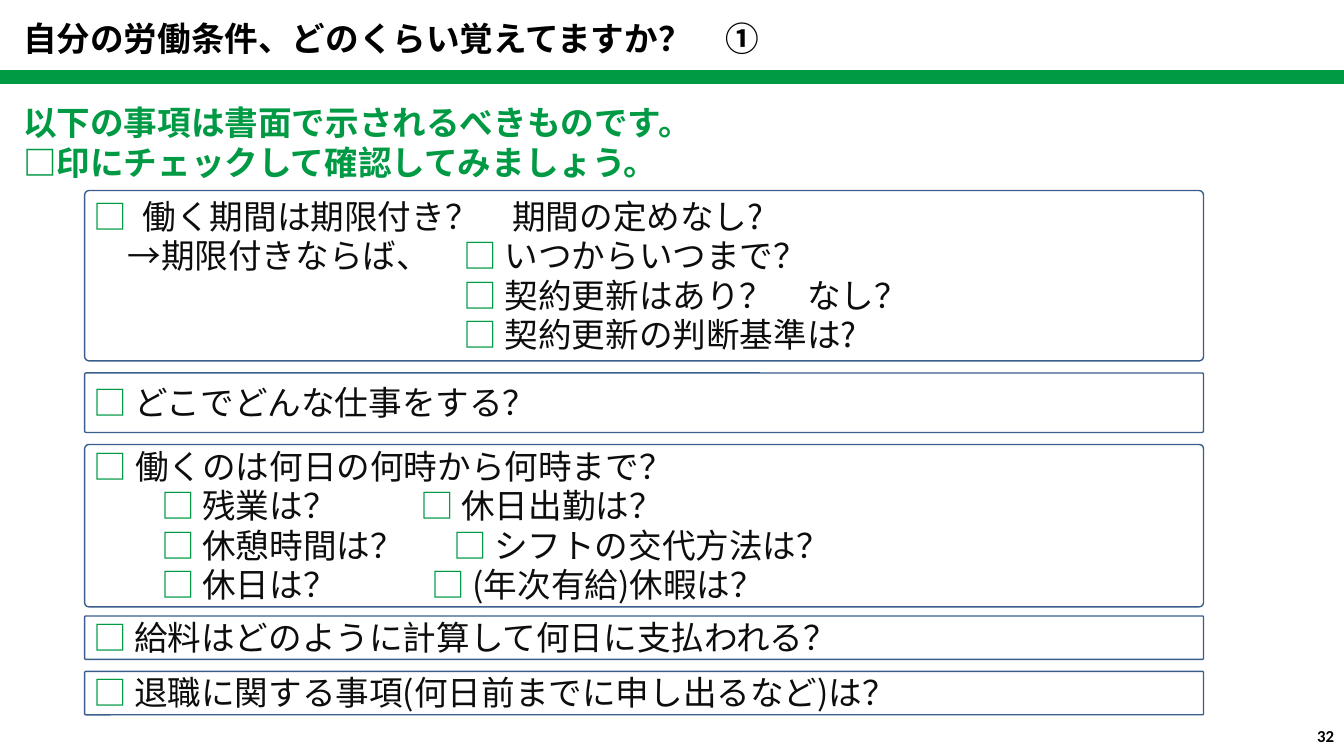
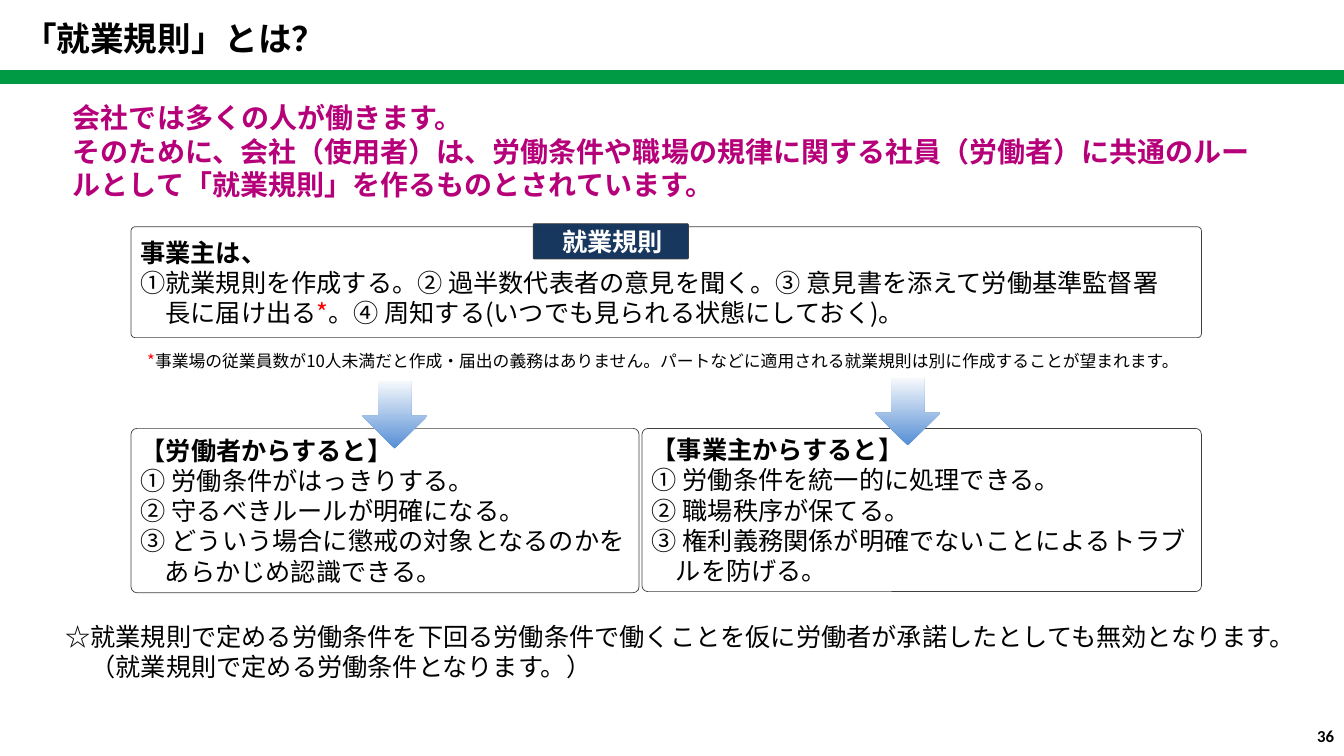
from dataclasses import dataclass
from lxml.etree import SubElement
from pptx import Presentation
from pptx.dml.color import RGBColor as Rgb
from pptx.enum.shapes import MSO_SHAPE as Form
from pptx.enum.text import MSO_ANCHOR as Anchor, PP_ALIGN as Align
from pptx.oxml.ns import qn
from pptx.util import Pt


@dataclass(frozen=True)
class Theme:
    font: str = "Noto Sans CJK JP"
    digit: str = "Calibri"
    black: str = "000000"
    ink: str = "0D0D0D"
    white: str = "FFFFFF"
    green: str = "009944"
    pink: str = "B6007A"
    red: str = "FF0000"
    navy: str = "17375E"
    blue: str = "3A5F8C"
    sky: str = "558ED5"
    pale: str = "F6F9FC"
    gray: str = "404040"
    big: int = 24
    lead: int = 20
    body: int = 18
    note: int = 12


T = Theme()
WIDE, HIGH = 960, 540
SNUG = (5.76, 3, 3, 3)
LOOSE = (7.2, 3.6, 7.2, 3.6)


def rgb(code):
    return Rgb.from_string(code)


def style(run, size, color, bold, font):
    run.font.size = Pt(size)
    run.font.bold = bold
    run.font.color.rgb = rgb(color)
    run.font.name = font
    SubElement(run.font._element, qn("a:ea")).set("typeface", font)


def indent(para, left, first):
    props = para._p.get_or_add_pPr()
    props.set("marL", str(Pt(left)))
    props.set("indent", str(Pt(first)))


def tabs(para, stops):
    group = SubElement(para._p.get_or_add_pPr(), qn("a:tabLst"))
    for stop in stops:
        tab = SubElement(group, qn("a:tab"))
        tab.set("pos", str(Pt(stop)))
        tab.set("algn", "l")


def write(shape, lines, size, color=T.black, bold=0, font=T.font, mark="",
          tint=T.red, space=None, align=Align.LEFT, inset=LOOSE,
          anchor=Anchor.MIDDLE, wrap=True):
    frame = shape.text_frame
    frame.text = "\n".join(lines)
    frame.word_wrap = wrap
    frame.vertical_anchor = anchor
    frame.margin_left, frame.margin_top, frame.margin_right, frame.margin_bottom = map(Pt, inset)
    for row, para in enumerate(frame.paragraphs):
        para.alignment = align
        if space:
            para.line_spacing = Pt(space)
        if mark and mark in para.text:
            parts = para.text.partition(mark)
            para.text = ""
            while parts[1]:
                for part in parts[:2]:
                    if part:
                        para.add_run().text = part
                parts = parts[2].partition(mark)
            if parts[0]:
                para.add_run().text = parts[0]
        for run in para.runs:
            hue = tint if mark and run.text == mark else color
            style(run, size, hue, row < bold, font)
    return frame.paragraphs


def label(slide, box, lines, size, **look):
    return write(slide.shapes.add_textbox(*map(Pt, box)), lines, size, **look)


def panel(slide, box, fill, line, width, curve=0.036):
    shape = slide.shapes.add_shape(Form.ROUNDED_RECTANGLE, *map(Pt, box))
    shape.adjustments[0] = curve
    shape.shadow.inherit = False
    shape.fill.solid()
    shape.fill.fore_color.rgb = rgb(fill)
    shape.line.color.rgb = rgb(line)
    shape.line.width = Pt(width)
    return shape


def arrow(slide, box):
    shape = slide.shapes.add_shape(Form.DOWN_ARROW, *map(Pt, box))
    shape.shadow.inherit = False
    shape.line.fill.background()
    shape.fill.gradient()
    shape.fill.gradient_angle = 90
    for stop, code in zip(shape.fill.gradient_stops, (T.sky, T.pale)):
        stop.color.rgb = rgb(code)


def base(deck, title, number):
    slide = deck.slides.add_slide(deck.slide_layouts[6])
    label(slide, (9.4, 9.4, 850, 36), [title], T.big, bold=1, anchor=Anchor.TOP)
    band = slide.shapes.add_shape(Form.RECTANGLE, 0, Pt(50), Pt(WIDE), Pt(10))
    band.shadow.inherit = False
    band.fill.solid()
    band.fill.fore_color.rgb = rgb(T.green)
    band.line.fill.background()
    label(slide, (736, 511, 224, 29), [number], T.note, bold=1,
          font=T.digit, align=Align.RIGHT)
    return slide


def check(slide, box, rows):
    shape = panel(slide, box, T.white, T.blue, 1, 0.026)
    paras = write(shape, [text for text, stops in rows], T.big, color=T.ink,
                  mark="□", tint=T.green, space=28, inset=SNUG)
    for para, (text, stops) in zip(paras, rows):
        if stops:
            tabs(para, stops)


def side(slide, box, lines):
    shape = panel(slide, box, T.white, T.gray, 0.5)
    for para in write(shape, lines, T.body, bold=1, inset=SNUG):
        indent(para, 17.3, -17.3)


def rule(slide, box):
    left, top, width, height = box
    shape = panel(slide, box, T.white, T.gray, 0.5)
    paras = write(shape, [
        "事業主は、",
        "①就業規則を作成する。② 過半数代表者の意見を聞く。③ 意見書を添えて労働基準監督署",
        "長に届け出る*。④ 周知する(いつでも見られる状態にしておく)。",
    ], T.body, bold=1, mark="*", inset=SNUG)
    indent(paras[2], 18, 0)
    tag = panel(slide, (left + 287.3, top - 2.2, 110.9, 25.2), T.navy, T.gray, 0.5)
    write(tag, ["就業規則"], T.body, color=T.white, bold=1, space=22,
          align=Align.CENTER, inset=SNUG)
    label(slide, (left + 5.8, top + 76.3, 757, 31.7), [
        "*事業場の従業員数が10人未満だと作成・届出の義務はありません。パートなどに適用される就業規則は別に作成することが望まれます。",
    ], T.note, mark="*", space=22, inset=SNUG)


def terms(deck):
    slide = base(deck, "自分の労働条件、どのくらい覚えてますか？　①", "32")
    label(slide, (9.4, 69.1, 850, 65.5), [
        "以下の事項は書面で示されるべきものです。",
        "□印にチェックして確認してみましょう。",
    ], T.big, color=T.green, bold=2, anchor=Anchor.TOP)
    groups = [
        (136.1, 121.7, [
            ("□\t働く期間は期限付き？　期間の定めなし?", (34.8,)),
            ("\t→期限付きならば、\t□ いつからいつまで？", (24, 264)),
            ("\t□ 契約更新はあり？　なし？", (264,)),
            ("\t□ 契約更新の判断基準は?", (264,)),
        ]),
        (266.4, 42.5, [("□ どこでどんな仕事をする？", ())]),
        (317.5, 116, [
            ("□ 働くのは何日の何時から何時まで？", ()),
            ("\t□ 残業は？\t□ 休日出勤は？", (48, 233)),
            ("\t□ 休憩時間は？\t□ シフトの交代方法は？", (48, 256.5)),
            ("\t□ 休日は？\t□ (年次有給)休暇は？", (48, 241)),
        ]),
        (440, 31, [("□ 給料はどのように計算して何日に支払われる？", ())]),
        (479.6, 31, [("□ 退職に関する事項(何日前までに申し出るなど)は？", ())]),
    ]
    for top, height, rows in groups:
        check(slide, (60.5, top, 799.2, height), rows)


def rules(deck):
    slide = base(deck, "「就業規則」とは？", "36")
    label(slide, (45, 66.2, 864, 83.5), [
        "会社では多くの人が働きます。",
        "そのために、会社（使用者）は、労働条件や職場の規律に関する社員（労働者）に共通のルールとして「就業規則」を作るものとされています。",
    ], T.lead, color=T.pink, bold=2)
    rule(slide, (93.6, 162, 764.6, 79.2))
    side(slide, (93.6, 306, 362.9, 117.4), [
        "【労働者からすると】",
        "① 労働条件がはっきりする。",
        "② 守るべきルールが明確になる。",
        "③ どういう場合に懲戒の対象となるのかをあらかじめ認識できる。",
    ])
    side(slide, (458.6, 306, 399.6, 116.6), [
        "【事業主からすると】",
        "① 労働条件を統一的に処理できる。",
        "② 職場秩序が保てる。",
        "③ 権利義務関係が明確でないことによるトラブルを防げる。",
    ])
    for left, top in ((258.5, 272.2), (625, 270)):
        arrow(slide, (left, top, 46.8, 48.2))
    paras = label(slide, (39.6, 440, 905, 51), [
        "☆就業規則で定める労働条件を下回る労働条件で働くことを仮に労働者が承諾したとしても無効となります。",
        "（就業規則で定める労働条件となります。）",
    ], T.body, anchor=Anchor.TOP, wrap=False)
    indent(paras[1], 18, 0)


def main():
    deck = Presentation()
    deck.slide_width, deck.slide_height = Pt(WIDE), Pt(HIGH)
    terms(deck)
    rules(deck)
    deck.save("out.pptx")


if __name__ == "__main__":
    main()
